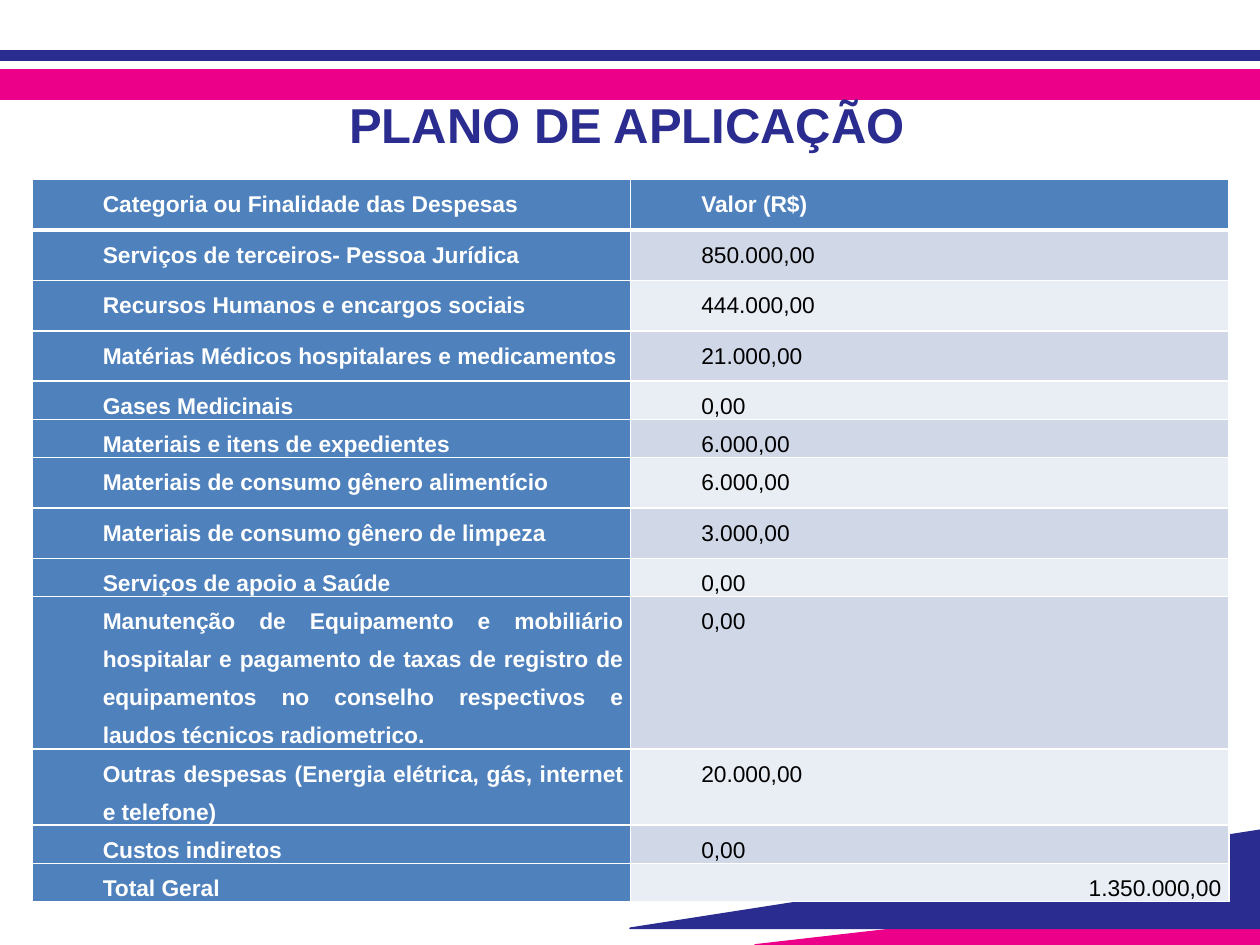
from pptx import Presentation
from pptx.dml.color import RGBColor as RGB
from pptx.enum.shapes import MSO_CONNECTOR as LINE, MSO_SHAPE as SHAPE
from pptx.enum.text import MSO_ANCHOR as ANCHOR, PP_ALIGN as ALIGN
from pptx.oxml import parse_xml
from pptx.oxml.ns import nsdecls
from pptx.util import Pt

NAVY = RGB(0x2B, 0x2C, 0x90)
PINK = RGB(0xEC, 0x00, 0x89)
BLUE = RGB(0x4F, 0x81, 0xBD)
PALE = RGB(0xD0, 0xD8, 0xE8)
LIGHT = RGB(0xE9, 0xED, 0xF4)
WHITE = RGB(0xFF, 0xFF, 0xFF)
BLACK = RGB(0x00, 0x00, 0x00)

ROWS = [
    ("Categoria ou Finalidade das Despesas", "Valor (R$)", 28.8),
    ("Serviços de terceiros- Pessoa Jurídica", "850.000,00", 28.8),
    ("Recursos Humanos e encargos sociais", "444.000,00", 28.8),
    ("Matérias Médicos hospitalares e medicamentos", "21.000,00", 28.8),
    ("Gases Medicinais", "0,00", 19.5),
    ("Materiais e itens de expedientes", "6.000,00", 19.5),
    ("Materiais de consumo gênero alimentício", "6.000,00", 28.8),
    ("Materiais de consumo gênero de limpeza", "3.000,00", 28.8),
    ("Serviços de apoio a Saúde", "0,00", 19.5),
    ("Manutenção de Equipamento e mobiliário hospitalar e pagamento de "
     "taxas de registro de equipamentos no conselho respectivos e laudos "
     "técnicos radiometrico.", "0,00", 87),
    ("Outras despesas (Energia elétrica, gás, internet e telefone)",
     "20.000,00", 42.5),
    ("Custos indiretos", "0,00", 19.5),
    ("Total Geral", "1.350.000,00", 19.5),
]


def paint(shape, color):
    shape.shadow.inherit = False
    shape.fill.solid()
    shape.fill.fore_color.rgb = color
    shape.line.color.rgb = color
    shape.line.width = Pt(0.96)


def border(cell, side, width):
    cell._tc.get_or_add_tcPr().append(parse_xml(
        f'<a:{side} {nsdecls("a")} w="{Pt(width)}"><a:solidFill>'
        f'<a:srgbClr val="{WHITE}"/></a:solidFill></a:{side}>'))


deck = Presentation()
deck.slide_width, deck.slide_height = Pt(720), Pt(540)
slide = deck.slides.add_slide(deck.slide_layouts[5])
shapes = slide.shapes

# Top bands
rule = shapes.add_connector(LINE.STRAIGHT, 0, Pt(31.7), Pt(720), Pt(31.7))
rule.line.color.rgb = NAVY
rule.line.width = Pt(5.64)
rule._element.spPr.append(parse_xml(f'<a:effectLst {nsdecls("a")}/>'))
for top, high, color in [(28.9, 5.6, NAVY), (40, 16.5, PINK)]:
    band = shapes.add_shape(SHAPE.RECTANGLE, 0, Pt(top), Pt(720), Pt(high))
    paint(band, color)

# Corner wedges
for left, top, base, color in [(431.5, 507, 540, PINK), (360, 474.5, 530.5, NAVY)]:
    pen = shapes.build_freeform(Pt(720), Pt(top))
    pen.add_line_segments([(Pt(left), Pt(base)), (Pt(720), Pt(base))])
    paint(pen.convert_to_shape(), color)

# Expense table
high = sum(row[2] for row in ROWS)
table = shapes.add_table(len(ROWS), 2, Pt(18.25), Pt(102.6), Pt(684), Pt(high)).table
for col in table.columns:
    col.width = Pt(342)
for r, (*texts, high) in enumerate(ROWS):
    table.rows[r].height = Pt(high)
    for c, text in enumerate(texts):
        cell = table.cell(r, c)
        strong = r == 0 or c == 0
        cell.margin_left = cell.margin_right = Pt(4.5)
        cell.margin_top = cell.margin_bottom = 0
        cell.vertical_anchor = ANCHOR.TOP
        for side in ("lnL", "lnR", "lnT", "lnB"):
            thick = (r, side) in [(0, "lnB"), (1, "lnT")]
            border(cell, side, 3 if thick else 1)
        cell.fill.solid()
        cell.fill.fore_color.rgb = BLUE if strong else PALE if r % 2 else LIGHT

        para = cell.text_frame.paragraphs[0]
        para._p.get_or_add_pPr().set("marL", str(Pt(36)))
        total = c == 1 and r == len(ROWS) - 1
        para.alignment = ALIGN.RIGHT if total else ALIGN.JUSTIFY
        para.line_spacing = 1.5
        para.space_after = Pt(8 * c)
        run = para.add_run()
        run.text = text
        run.font.name = "Arial"
        run.font.size = Pt(13)
        run.font.bold = strong
        run.font.color.rgb = WHITE if strong else BLACK

# Title, in front of the bands
title = shapes.title
title.left, title.top, title.width, title.height = Pt(36), Pt(54), Pt(644.5), Pt(34)
frame = title.text_frame
frame.margin_left = frame.margin_right = frame.margin_top = frame.margin_bottom = 0
frame.word_wrap = True
frame.vertical_anchor = ANCHOR.TOP
para = frame.paragraphs[0]
para.alignment = ALIGN.CENTER
run = para.add_run()
run.text = "PLANO DE APLICAÇÃO"
run.font.name = "Arial"
run.font.size = Pt(28)
run.font.bold = True
run.font.color.rgb = NAVY
shapes._spTree.append(title._element)

deck.save("out.pptx")
